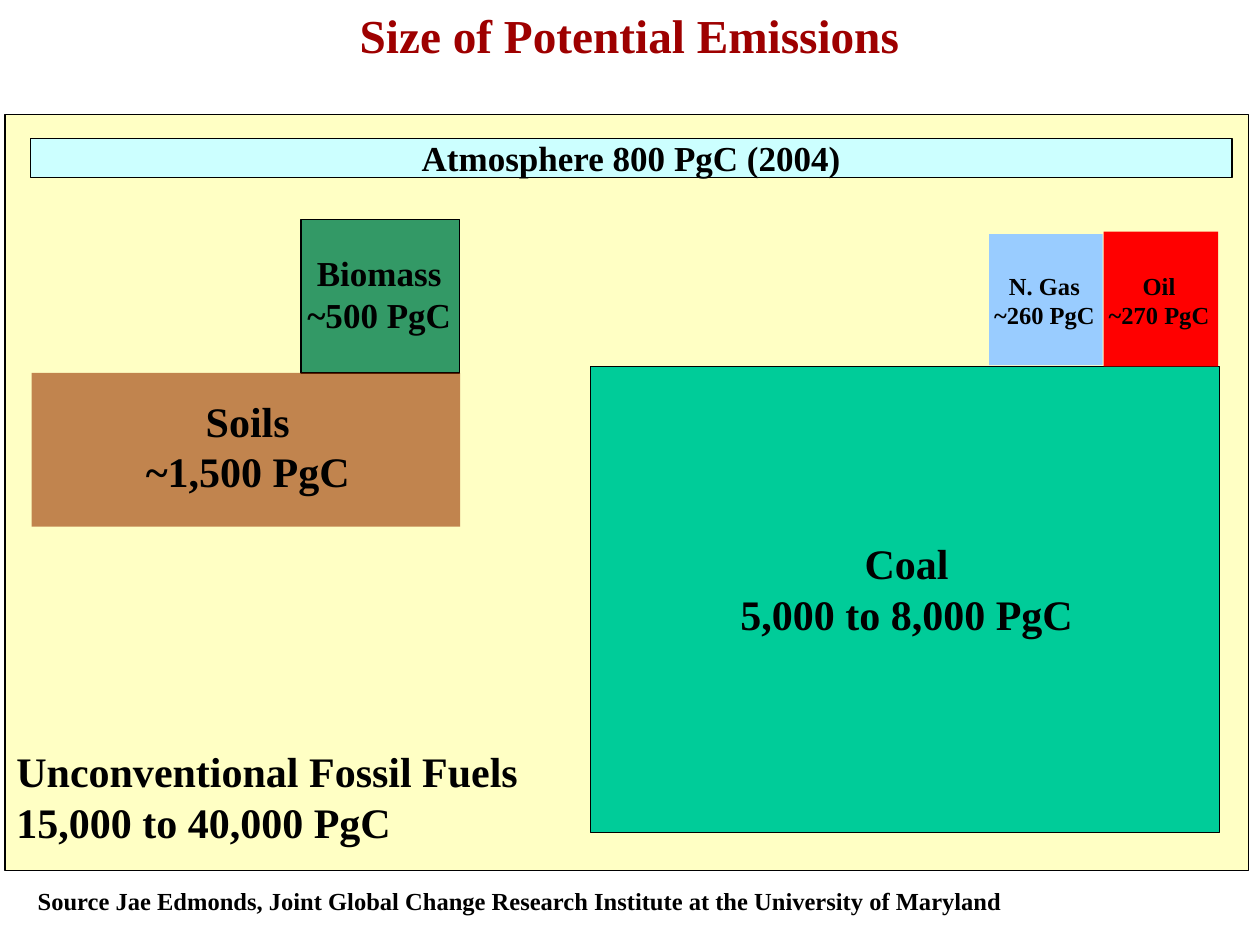
from dataclasses import dataclass
from typing import Optional

from lxml.etree import SubElement
from pptx import Presentation
from pptx.dml.color import RGBColor
from pptx.enum.shapes import MSO_SHAPE as Preset
from pptx.enum.text import MSO_ANCHOR as Anchor, MSO_AUTO_SIZE as AutoSize, PP_ALIGN as Align
from pptx.oxml.ns import qn
from pptx.util import Cm, Pt

FONT = "Times New Roman"
BLACK = "000000"


@dataclass(frozen=True)
class Box:
    left: float
    top: float
    width: float
    height: float

    def lengths(self) -> tuple:
        return Cm(self.left), Cm(self.top), Cm(self.width), Cm(self.height)


@dataclass(frozen=True)
class Reservoir:
    """A carbon pool: its block and the label laid over it."""
    block: Box
    fill: str
    label: Box
    lines: tuple[str, ...]
    size: int
    opacity: int = 100
    outlined: bool = True
    align: Align = Align.CENTER


RESERVOIRS = [
    Reservoir(Box(0.1, 2.31, 25.07, 15.24), "FFFF00", Box(0.08, 14.91, 12.07, 2.31),
              ("Unconventional Fossil Fuels", "15,000 to 40,000 PgC"), 24,
              opacity=23, align=Align.LEFT),
    Reservoir(Box(11.91, 7.39, 12.67, 9.4), "00CC99", Box(12.24, 10.72, 12.07, 2.31),
              ("Coal", "5,000 to 8,000 PgC"), 24),
    Reservoir(Box(6.07, 4.42, 3.2, 3.1), "339966", Box(5.74, 4.95, 3.81, 1.96),
              ("Biomass", "~500 PgC"), 20),
    Reservoir(Box(0.64, 7.52, 8.64, 3.1), "993300", Box(2.01, 7.85, 5.97, 2.31),
              ("Soils", "~1,500 PgC"), 24, opacity=60, outlined=False),
    Reservoir(Box(22.25, 4.67, 2.31, 2.72), "FF0000", Box(21.46, 5.33, 3.81, 1.45),
              ("Oil", "~270 PgC"), 14, outlined=False),
    Reservoir(Box(19.94, 4.72, 2.29, 2.64), "99CCFF", Box(19.15, 5.33, 3.81, 1.45),
              ("N. Gas", "~260 PgC"), 14, outlined=False),
]


def rgb(value: str) -> RGBColor:
    return RGBColor.from_string(value)


def write(frame, *lines: str, size: int, color: str = BLACK, align: Align = Align.CENTER,
          anchor: Anchor = Anchor.TOP, wrap: bool = True) -> None:
    frame.word_wrap = wrap
    frame.vertical_anchor = anchor
    for number, line in enumerate(lines):
        paragraph = frame.add_paragraph() if number else frame.paragraphs[0]
        paragraph.alignment = align
        run = paragraph.add_run()
        run.text = line
        run.font.name, run.font.size, run.font.bold = FONT, Pt(size), True
        run.font.color.rgb = rgb(color)


def add_label(slide, box: Box, *lines: str, **text_format) -> None:
    frame = slide.shapes.add_textbox(*box.lengths()).text_frame
    write(frame, *lines, **text_format)
    frame.auto_size = AutoSize.SHAPE_TO_FIT_TEXT


def add_block(slide, box: Box, fill: str, opacity: Optional[int] = 100, outlined: bool = True):
    block = slide.shapes.add_shape(Preset.RECTANGLE, *box.lengths())
    block.shadow.inherit = False
    block.fill.solid()
    block.fill.fore_color.rgb = rgb(fill)
    if opacity < 100:
        color = block.fill._xPr.find(qn("a:solidFill"))[0]
        SubElement(color, qn("a:alpha"), val=str(opacity * 1000))
    if outlined:
        block.line.color.rgb = rgb(BLACK)
        block.line.width = Pt(0.75)
    else:
        block.line.fill.background()
    return block


def main() -> None:
    deck = Presentation()
    deck.slide_width, deck.slide_height = Cm(25.4), Cm(19.05)
    slide = deck.slides.add_slide(deck.slide_layouts[6])

    for pool in RESERVOIRS:
        add_block(slide, pool.block, pool.fill, pool.opacity, pool.outlined)
        add_label(slide, pool.label, *pool.lines, size=pool.size, align=pool.align)

    atmosphere = add_block(slide, Box(0.61, 2.79, 24.23, 0.79), "CCFFFF")
    write(atmosphere.text_frame, "Atmosphere 800 PgC (2004)", size=20,
          anchor=Anchor.MIDDLE, wrap=False)

    add_label(slide, Box(4.27, 0, 16.84, 1.42), "Size of Potential Emissions",
              size=27, color="9E0000")
    add_label(slide, Box(0.51, 17.73, 20.22, 0.86),
              "Source Jae Edmonds, Joint Global Change Research Institute "
              "at the University of Maryland",
              size=14, align=Align.LEFT, wrap=False)
    deck.save("out.pptx")


if __name__ == "__main__":
    main()
